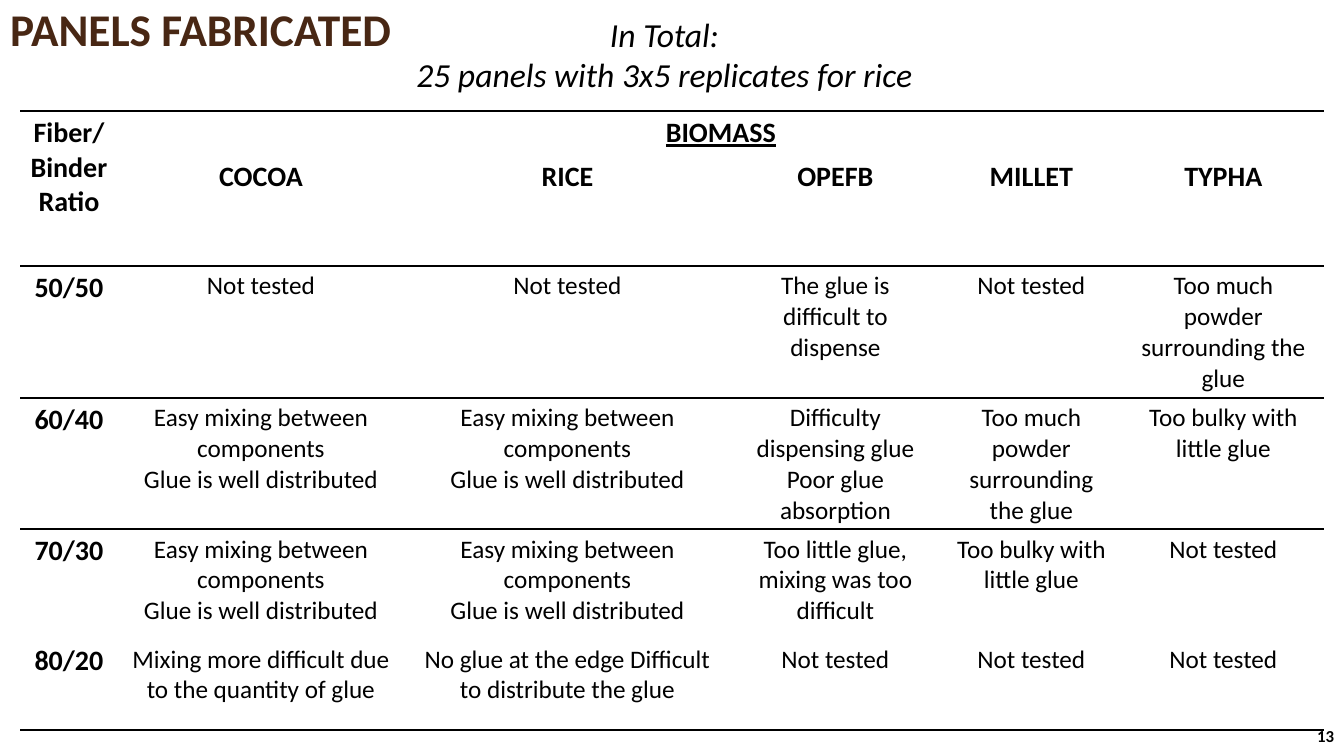
import pptx
import pptx.dml.color
import pptx.enum.text
import pptx.oxml
import pptx.oxml.ns
import pptx.util

PX = 9144000 / 1008
ALIGN = pptx.enum.text.PP_ALIGN
MIDDLE = pptx.enum.text.MSO_ANCHOR.MIDDLE
PLAIN = "{2D5ABB26-0587-4C30-8999-92F81FD0307C}"

EASY = "Easy mixing between components\nGlue is well distributed"
NONE = "Not tested"
BULKY = "Too bulky with little glue"
POWDER = "Too much powder surrounding the glue"
ROWS = [
    ["Fiber/Binder Ratio", "BIOMASS", "", "", "", ""],
    ["", "COCOA", "RICE", "OPEFB", "MILLET", "TYPHA"],
    ["50/50", NONE, NONE, "The glue is difficult to dispense", NONE, POWDER],
    ["60/40", EASY, EASY, "Difficulty dispensing glue\nPoor glue absorption",
     POWDER, BULKY],
    ["70/30", EASY, EASY, "Too little glue, mixing was too difficult",
     BULKY, NONE],
    ["80/20", "Mixing more difficult due to the quantity of glue",
     "No glue at the edge Difficult to distribute the glue", NONE, NONE, NONE],
]
WIDTHS = [98, 286, 327, 209, 183, 201]
HEIGHTS = [44, 110, 132, 131, 110, 91]
# Line widths in points above and below each row
RULES = [{"T": 1}, {"B": 2.25}, {"T": 2.25, "B": 2.25}, {"T": 2.25}, {},
         {"B": 1}]


def px(num):
    return pptx.util.Emu(round(num * PX))


def color(code):
    return pptx.dml.color.RGBColor.from_string(code)


class Page:
    font = "Calibri"
    ink = "000000"

    def __init__(self, deck):
        self.slide = deck.slides.add_slide(deck.slide_layouts[5])

    def fill(self, frame, text, size, align, ink=None, space=None, **style):
        """Put styled text in a text frame."""
        frame.text = text
        style = {"name": self.font, "size": pptx.util.Pt(size), **style}
        for para in frame.paragraphs:
            para.alignment = align
            if space:
                para.line_spacing = space
            for run in para.runs:
                for key, val in style.items():
                    setattr(run.font, key, val)
                run.font.color.rgb = color(ink or self.ink)

    def title(self, text, box):
        shape = self.slide.shapes.title
        for key, val in zip(("left", "top", "width", "height"), box):
            setattr(shape, key, px(val))
        shape.text_frame.vertical_anchor = MIDDLE
        self.fill(shape.text_frame, text, 32.4, ALIGN.LEFT, "482714", 0.9,
                  bold=True)

    def text(self, text, box, size, align, frame, **style):
        """Add a text box; frame holds the text frame's settings."""
        shape = self.slide.shapes.add_textbox(*map(px, box))
        for key, val in frame.items():
            setattr(shape.text_frame, key, val)
        self.fill(shape.text_frame, text, size, align, **style)

    def border(self, cell, side, width):
        props = cell._tc.get_or_add_tcPr()
        space = pptx.oxml.ns.nsdecls("a")
        props.append(pptx.oxml.parse_xml(
            f'<a:ln{side} {space} w="{pptx.util.Pt(width)}"><a:solidFill>'
            f'<a:srgbClr val="{self.ink}"/></a:solidFill></a:ln{side}>'))

    def table(self, rows, left, top, widths, heights, rules):
        box = map(px, (left, top, sum(widths), sum(heights)))
        grid = self.slide.shapes.add_table(len(rows), len(widths), *box).table
        grid.first_row = grid.horz_banding = False
        grid._tbl.tblPr.find(pptx.oxml.ns.qn("a:tableStyleId")).text = PLAIN
        for col, width in zip(grid.columns, widths):
            col.width = px(width)
        for row, height in zip(grid.rows, heights):
            row.height = px(height)
        for i, line in enumerate(rows):
            for j, text in enumerate(line):
                cell = grid.cell(i, j)
                head = i < 2 or j == 0
                self.fill(cell.text_frame, text, 20 if head else 18,
                          ALIGN.CENTER, bold=head,
                          underline=text == "BIOMASS")
                for side, width in rules[i].items():
                    self.border(cell, side, width)
                cell.fill.background()
        grid.cell(0, 0).merge(grid.cell(1, 0))
        grid.cell(0, 1).merge(grid.cell(0, len(widths) - 1))


def main():
    deck = pptx.Presentation()
    deck.slide_width, deck.slide_height = px(1344), px(756)
    page = Page(deck)
    page.title("PANELS FABRICATED", (0, 0, 1010, 64))
    page.text("In Total:\n25 panels with 3x5 replicates for rice",
              (404, 9, 521, 92), 24, ALIGN.CENTER,
              {"word_wrap": False,
               "auto_size": pptx.enum.text.MSO_AUTO_SIZE.SHAPE_TO_FIT_TEXT},
              italic=True)
    page.text("13", (1182, 716, 162, 40), 12, ALIGN.RIGHT,
              {"word_wrap": True, "vertical_anchor": MIDDLE}, bold=True)
    page.table(ROWS, 20, 111, WIDTHS, HEIGHTS, RULES)
    deck.save("out.pptx")


if __name__ == "__main__":
    main()
